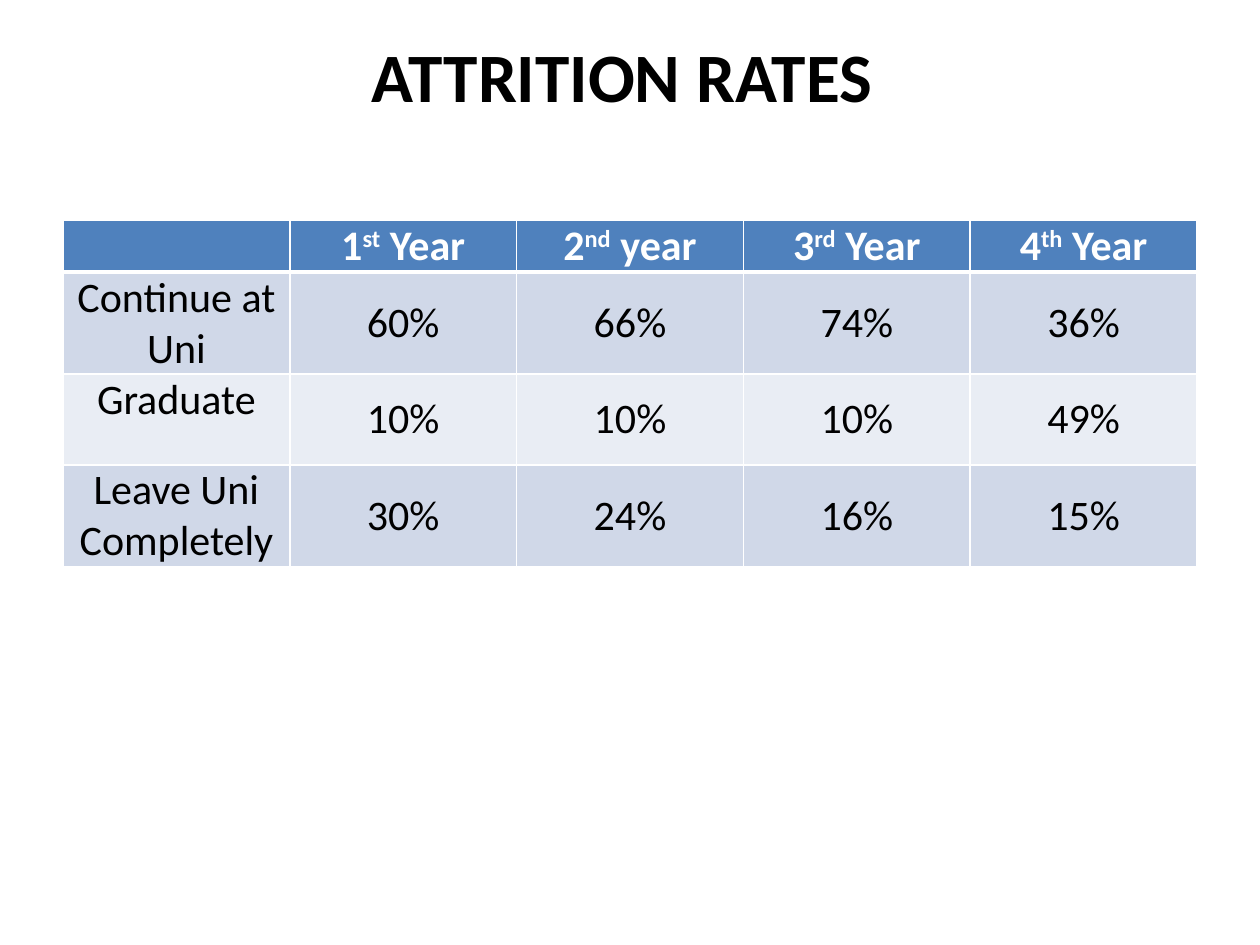
from copy import deepcopy
from pptx import Presentation
from pptx.dml.color import RGBColor
from pptx.enum.text import MSO_ANCHOR, PP_ALIGN
from pptx.oxml.ns import qn
from pptx.util import Inches, Pt
from lxml.etree import SubElement

BLACK, WHITE, BLUE = "000000", "FFFFFF", "4F81BD"
BANDS = ("D0D8E8", "E9EDF4")
TITLE = {"name": "Calibri", "size": Pt(39.6), "bold": True}
HEAD = {"name": "Calibri", "size": Pt(24), "bold": True}
BODY = {**HEAD, "bold": False}

YEARS = [("1", "st", " Year"), ("2", "nd", " year"),
         ("3", "rd", " Year"), ("4", "th", " Year")]
RATES = [
    (["Continue at Uni"], ["60%", "66%", "74%", "36%"]),
    (["Graduate"], ["10%", "10%", "10%", "49%"]),
    (["Leave Uni", "Completely"], ["30%", "24%", "16%", "15%"]),
]
ROW_HEIGHTS = (0.41, 0.81, 0.72, 0.81)


def rgb(color):
    return RGBColor.from_string(color)


def add_run(p, text, style, color, raised=False):
    r = p.add_run()
    r.text = text
    for name, value in style.items():
        setattr(r.font, name, value)
    r.font.color.rgb = rgb(color)
    if raised:
        r._r.get_or_add_rPr().set("baseline", "30000")
    return r


def add_borders(cell, bottom):
    tc_pr = cell._tc.get_or_add_tcPr()
    for i, (side, width) in enumerate(
            {"lnL": 1, "lnR": 1, "lnT": 1, "lnB": bottom}.items()):
        ln = tc_pr.makeelement(qn(f"a:{side}"), {"w": str(Pt(width))})
        fill = SubElement(ln, qn("a:solidFill"))
        SubElement(fill, qn("a:srgbClr"), val=WHITE)
        tc_pr.insert(i, ln)  # borders come before the fill


def fill_cell(cell, paragraphs, style, color, fill, anchor, bottom=1):
    """Each paragraph is a list of (text, raised) pairs."""
    margins = {"margin_left": 0.07, "margin_right": 0.07,
               "margin_top": 0, "margin_bottom": 0}
    for name, value in margins.items():
        setattr(cell, name, Inches(value))
    cell.vertical_anchor = anchor
    cell.fill.solid()
    cell.fill.fore_color.rgb = rgb(fill)
    add_borders(cell, bottom)
    tf = cell.text_frame
    for i, parts in enumerate(paragraphs):
        p = tf.add_paragraph() if i else tf.paragraphs[0]
        p.alignment = PP_ALIGN.CENTER
        for text, raised in parts:
            add_run(p, text, style, color, raised)


def add_title(s, x, y, w, h):
    tf = s.shapes.add_textbox(Inches(x), Inches(y), Inches(w), Inches(h)).text_frame
    tf.word_wrap = True
    tf.vertical_anchor = MSO_ANCHOR.MIDDLE
    p = tf.paragraphs[0]
    p.alignment = PP_ALIGN.CENTER
    r = add_run(p, "ATTRITION RATES ", TITLE, BLACK)
    # The closing line break keeps the title's size
    p.add_line_break()
    p._p[-1].append(deepcopy(r._r.rPr))
    end = SubElement(p._p, qn("a:endParaRPr"))
    end.set("sz", r._r.rPr.get("sz"))


def add_rates_table(s, x, y, w):
    cols = len(YEARS) + 1
    table = s.shapes.add_table(len(ROW_HEIGHTS), cols, Inches(x), Inches(y),
                               Inches(w), Inches(sum(ROW_HEIGHTS))).table
    for col in table.columns:
        col.width = Inches(w / cols)
    for row, height in zip(table.rows, ROW_HEIGHTS):
        row.height = Inches(height)

    # Header row
    heads = [[]] + [[list(zip(year, (False, True, False)))] for year in YEARS]
    for c, paragraphs in enumerate(heads):
        fill_cell(table.cell(0, c), paragraphs, HEAD, WHITE, BLUE,
                  MSO_ANCHOR.TOP, bottom=3)

    # Banded body rows
    for i, (label, values) in enumerate(RATES):
        for c, lines in enumerate([label] + [[v] for v in values]):
            fill_cell(table.cell(i + 1, c), [[(line, False)] for line in lines],
                      BODY, BLACK, BANDS[i % 2],
                      MSO_ANCHOR.MIDDLE if c else MSO_ANCHOR.TOP)
            if i == 0:  # shares the thick line under the header
                top = table.cell(1, c)._tc.tcPr.find(qn("a:lnT"))
                top.set("w", str(Pt(3)))


def main():
    prs = Presentation()
    prs.slide_width, prs.slide_height = Inches(10), Inches(7.5)
    s = prs.slides.add_slide(prs.slide_layouts[6])
    add_title(s, 0.5, 0.3, 9, 1.25)
    add_rates_table(s, 0.5, 1.75, 9)
    prs.save("out.pptx")


if __name__ == "__main__":
    main()
